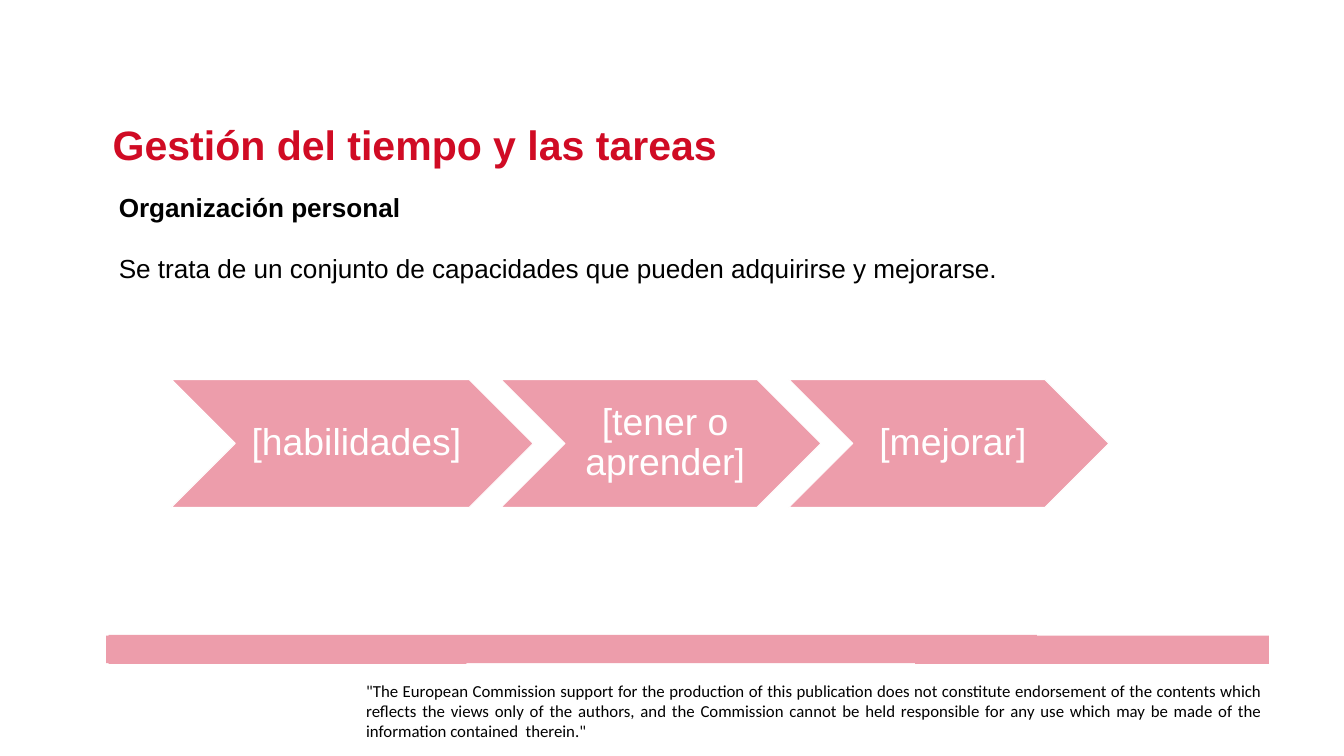
from pptx import Presentation
from pptx.dml.color import RGBColor
from pptx.enum.shapes import MSO_SHAPE
from pptx.enum.text import MSO_ANCHOR, PP_ALIGN
from pptx.util import Cm, Pt

CHEVRON = MSO_SHAPE.CHEVRON
MIDDLE = MSO_ANCHOR.MIDDLE
CENTER, JUSTIFY, LEFT = PP_ALIGN.CENTER, PP_ALIGN.JUSTIFY, PP_ALIGN.LEFT

RED = RGBColor(0xD0, 0x0B, 0x24)
PINK = RGBColor(0xED, 0x9D, 0xAB)
BLACK = RGBColor(0, 0, 0)
WHITE = RGBColor(255, 255, 255)

BAND_OUTLINE = [
    (47.96, 24.03), (39.19, 24.03), (39.19, 24), (4.11, 24), (4.11, 24.03),
    (4.01, 24.03), (4.01, 25.07), (4.11, 25.07), (4.11, 25.1), (17.63, 25.1),
    (17.63, 25.07), (34.59, 25.07), (34.59, 25.1), (47.96, 25.1),
]
STEPS = [("[habilidades]", 13.67), ("[tener o aprender]", 12.09), ("[mejorar]", 12.09)]
STEPS_LEFT, STEPS_TOP, STEP_HEIGHT, STEP_OVERLAP = 6.48, 14.35, 4.83, 1.21

DISCLAIMER = (
    "\"The European Commission support for the production of this publication "
    "does not constitute endorsement of the contents which reflects the views "
    "only of the authors, and the Commission cannot be held responsible for any "
    "use which may be made of the information contained  therein.\""
)


def set_margins(frame, left, top, right, bottom):
    frame.margin_left, frame.margin_top = Cm(left), Cm(top)
    frame.margin_right, frame.margin_bottom = Cm(right), Cm(bottom)


def write_paragraph(paragraph, text, size, color, bold=False, font="Arial", align=LEFT):
    paragraph.text = text
    paragraph.alignment = align
    paragraph.font.name = font
    paragraph.font.size = Pt(size)
    paragraph.font.bold = bold
    paragraph.font.color.rgb = color


def add_text_frame(slide, left, top, width, height):
    box = slide.shapes.add_textbox(Cm(left), Cm(top), Cm(width), Cm(height))
    frame = box.text_frame
    frame.word_wrap = True
    set_margins(frame, 0.25, 0.13, 0.25, 0.13)
    return frame


def add_band(slide):
    start, *corners = [(Cm(x), Cm(y)) for x, y in BAND_OUTLINE]
    builder = slide.shapes.build_freeform(*start)
    builder.add_line_segments(corners, close=True)
    band = builder.convert_to_shape()
    band.shadow.inherit = False
    band.fill.solid()
    band.fill.fore_color.rgb = PINK
    band.line.fill.background()


def add_disclaimer(slide):
    frame = add_text_frame(slide, 13.84, 25.78, 33.86, 1.93)
    set_margins(frame, 0, 0, 0, 0)
    paragraph = frame.paragraphs[0]
    write_paragraph(paragraph, DISCLAIMER, 18, BLACK, font="Calibri", align=JUSTIFY)
    paragraph.line_spacing = 0.98


def add_title(slide):
    frame = add_text_frame(slide, 4.01, 4.37, 24.49, 2.11)
    write_paragraph(frame.paragraphs[0], "Gestión del tiempo y las tareas", 44, RED, bold=True)


def add_introduction(slide):
    frame = add_text_frame(slide, 4.24, 7.11, 36.63, 3.81)
    write_paragraph(frame.paragraphs[0], "Organización personal", 28, BLACK, bold=True)
    sentence = frame.add_paragraph()
    write_paragraph(
        sentence,
        "Se trata de un conjunto de capacidades que pueden adquirirse y mejorarse.",
        28, BLACK,
    )
    sentence.space_before = Pt(32)


def add_step(shapes, label, left, width):
    step = shapes.add_shape(CHEVRON, Cm(left), Cm(STEPS_TOP), Cm(width), Cm(STEP_HEIGHT))
    step.shadow.inherit = False
    step.fill.solid()
    step.fill.fore_color.rgb = PINK
    step.line.color.rgb = WHITE
    step.line.width = Pt(1)
    frame = step.text_frame
    frame.word_wrap = True
    frame.vertical_anchor = MIDDLE
    set_margins(frame, 0.46, 0.15, 0.15, 0.15)
    paragraph = frame.paragraphs[0]
    write_paragraph(paragraph, label, 40, WHITE, align=CENTER)
    paragraph.line_spacing = 0.9


def add_process(slide):
    group = slide.shapes.add_group_shape()
    left = STEPS_LEFT
    for label, width in STEPS:
        add_step(group.shapes, label, left, width)
        left += width - STEP_OVERLAP


def main():
    presentation = Presentation()
    presentation.slide_width = Cm(50.8)
    presentation.slide_height = Cm(28.58)
    slide = presentation.slides.add_slide(presentation.slide_layouts[6])
    add_band(slide)
    add_disclaimer(slide)
    add_introduction(slide)
    add_process(slide)
    add_title(slide)
    presentation.save("out.pptx")


if __name__ == "__main__":
    main()
